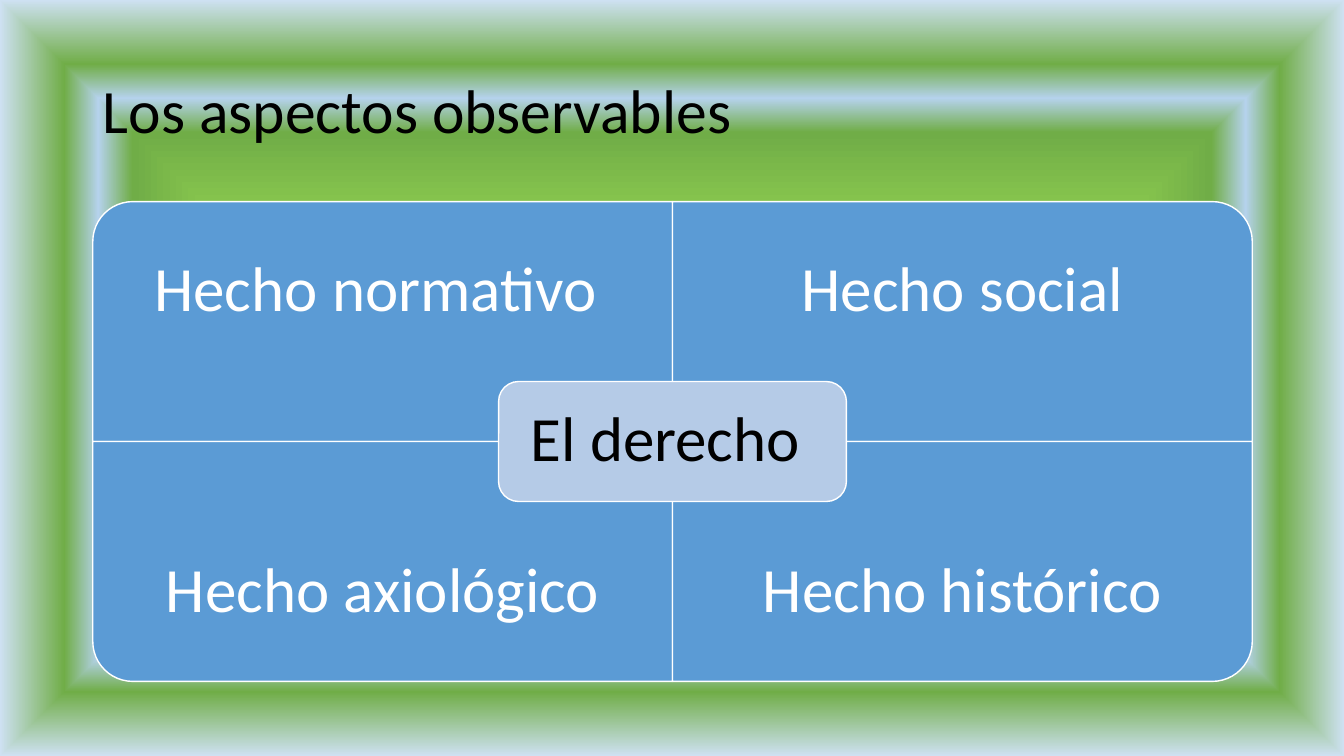
from dataclasses import dataclass

from lxml import etree
from pptx import Presentation
from pptx.dml.color import RGBColor
from pptx.enum.shapes import MSO_SHAPE
from pptx.enum.text import MSO_ANCHOR, MSO_AUTO_SIZE, PP_ALIGN
from pptx.oxml.ns import qn
from pptx.shapes.autoshape import Shape
from pptx.shapes.shapetree import GroupShapes
from pptx.slide import Slide
from pptx.text.text import TextFrame
from pptx.util import Inches, Pt

ROUND_ONE_CORNER = MSO_SHAPE.ROUND_1_RECTANGLE
ROUNDED = MSO_SHAPE.ROUNDED_RECTANGLE
MIDDLE = MSO_ANCHOR.MIDDLE
NO_AUTOFIT = MSO_AUTO_SIZE.NONE
LEFT, CENTER = PP_ALIGN.LEFT, PP_ALIGN.CENTER

FONT = "Calibri"
COLORS = {
    "lime": "92D050",
    "green": "70AD47",
    "sky": "B5D2EC",
    "pale": "CEE1F2",
    "quadrant": "5B9BD5",
    "center": "B5CBE7",
    "white": "FFFFFF",
    "black": "000000",
}
# Gradient stops from the middle of the slide to its edge, in percent
BACKGROUND_STOPS = [
    (0, "lime"), (37, "lime"), (65, "green"),
    (74, "sky"), (83, "green"), (100, "pale"),
]

# Matrix geometry, in inches
MATRIX_LEFT, MATRIX_TOP = 0.92, 2.0
QUADRANT_WIDTH, QUADRANT_HEIGHT = 5.75, 2.38
LABEL_HEIGHT = 1.78
CENTER_WIDTH, CENTER_HEIGHT = 3.45, 1.19
CENTER_PADDING = 0.06


@dataclass(frozen=True)
class Box:
    left: float
    top: float
    width: float
    height: float

    def emu(self) -> list[int]:
        return [Inches(n) for n in (self.left, self.top, self.width, self.height)]


@dataclass(frozen=True)
class Quadrant:
    text: str
    row: int
    column: int
    rotation: int


QUADRANTS = [
    Quadrant("Hecho normativo ", 0, 0, 270),
    Quadrant("Hecho social", 0, 1, 0),
    Quadrant("Hecho axiológico", 1, 0, 180),
    Quadrant("Hecho histórico", 1, 1, 90),
]


def paint_background(slide: Slide) -> None:
    slide.background.fill.gradient()
    gradient = next(slide.element.iter(qn("a:gradFill")))
    for child in list(gradient):
        gradient.remove(child)
    stops = etree.SubElement(gradient, qn("a:gsLst"))
    for percent, color in BACKGROUND_STOPS:
        stop = etree.SubElement(stops, qn("a:gs"), pos=str(percent * 1000))
        etree.SubElement(stop, qn("a:srgbClr"), val=COLORS[color])
    shading = etree.SubElement(gradient, qn("a:path"), path="shape")
    etree.SubElement(shading, qn("a:fillToRect"), l="50000", t="50000", r="50000", b="50000")


def write_text(frame: TextFrame, text: str, size: int, color: str, alignment: PP_ALIGN) -> None:
    frame.word_wrap = True
    frame.auto_size = NO_AUTOFIT
    frame.vertical_anchor = MIDDLE
    paragraph = frame.paragraphs[0]
    paragraph.alignment = alignment
    paragraph.line_spacing = 0.9
    run = paragraph.add_run()
    run.text = text
    run.font.name = FONT
    run.font.size = Pt(size)
    run.font.color.rgb = RGBColor.from_string(COLORS[color])


def add_panel(shapes: GroupShapes, kind: MSO_SHAPE, box: Box, fill: str) -> Shape:
    shape = shapes.add_shape(kind, *box.emu())
    shape.shadow.inherit = False
    shape.fill.solid()
    shape.fill.fore_color.rgb = RGBColor.from_string(COLORS[fill])
    shape.line.color.rgb = RGBColor.from_string(COLORS["white"])
    shape.line.width = Pt(1)
    return shape


def add_label(shapes: GroupShapes, box: Box, text: str, color: str, inset: float) -> None:
    frame = shapes.add_textbox(*box.emu()).text_frame
    frame.margin_left = frame.margin_right = Inches(inset)
    frame.margin_top = frame.margin_bottom = Inches(inset)
    write_text(frame, text, 45, color, CENTER)


def add_quadrant(shapes: GroupShapes, quadrant: Quadrant) -> None:
    left = MATRIX_LEFT + quadrant.column * QUADRANT_WIDTH
    top = MATRIX_TOP + quadrant.row * QUADRANT_HEIGHT
    width, height = QUADRANT_WIDTH, QUADRANT_HEIGHT
    box = Box(left, top, width, height)
    # A quarter turn swaps the sides around the same middle point
    if quadrant.rotation % 180:
        shift = (width - height) / 2
        box = Box(left + shift, top - shift, height, width)
    add_panel(shapes, ROUND_ONE_CORNER, box, "quadrant").rotation = quadrant.rotation
    # Labels keep to the outer part of each quadrant
    label_top = top + quadrant.row * (height - LABEL_HEIGHT)
    add_label(shapes, Box(left, label_top, width, LABEL_HEIGHT), quadrant.text, "white", 0.35)


def add_center(shapes: GroupShapes) -> None:
    left = MATRIX_LEFT + QUADRANT_WIDTH - CENTER_WIDTH / 2
    top = MATRIX_TOP + QUADRANT_HEIGHT - CENTER_HEIGHT / 2
    add_panel(shapes, ROUNDED, Box(left, top, CENTER_WIDTH, CENTER_HEIGHT), "center")
    label_box = Box(
        left + CENTER_PADDING,
        top + CENTER_PADDING,
        CENTER_WIDTH - 2 * CENTER_PADDING,
        CENTER_HEIGHT - 2 * CENTER_PADDING,
    )
    add_label(shapes, label_box, "El derecho ", "black", 0.19)


def main() -> None:
    presentation = Presentation()
    presentation.slide_width = Inches(13.33)
    presentation.slide_height = Inches(7.5)
    slide = presentation.slides.add_slide(presentation.slide_layouts.get_by_name("Title Only"))
    paint_background(slide)

    # Title
    title = slide.shapes.title
    title.left, title.top, title.width, title.height = Box(0.92, 0.4, 11.5, 1.45).emu()
    write_text(title.text_frame, "Los aspectos observables", 44, "black", LEFT)

    # Matrix of four aspects around the central concept
    matrix = slide.shapes.add_group_shape().shapes
    for quadrant in QUADRANTS:
        add_quadrant(matrix, quadrant)
    add_center(matrix)

    presentation.save("out.pptx")


if __name__ == "__main__":
    main()
